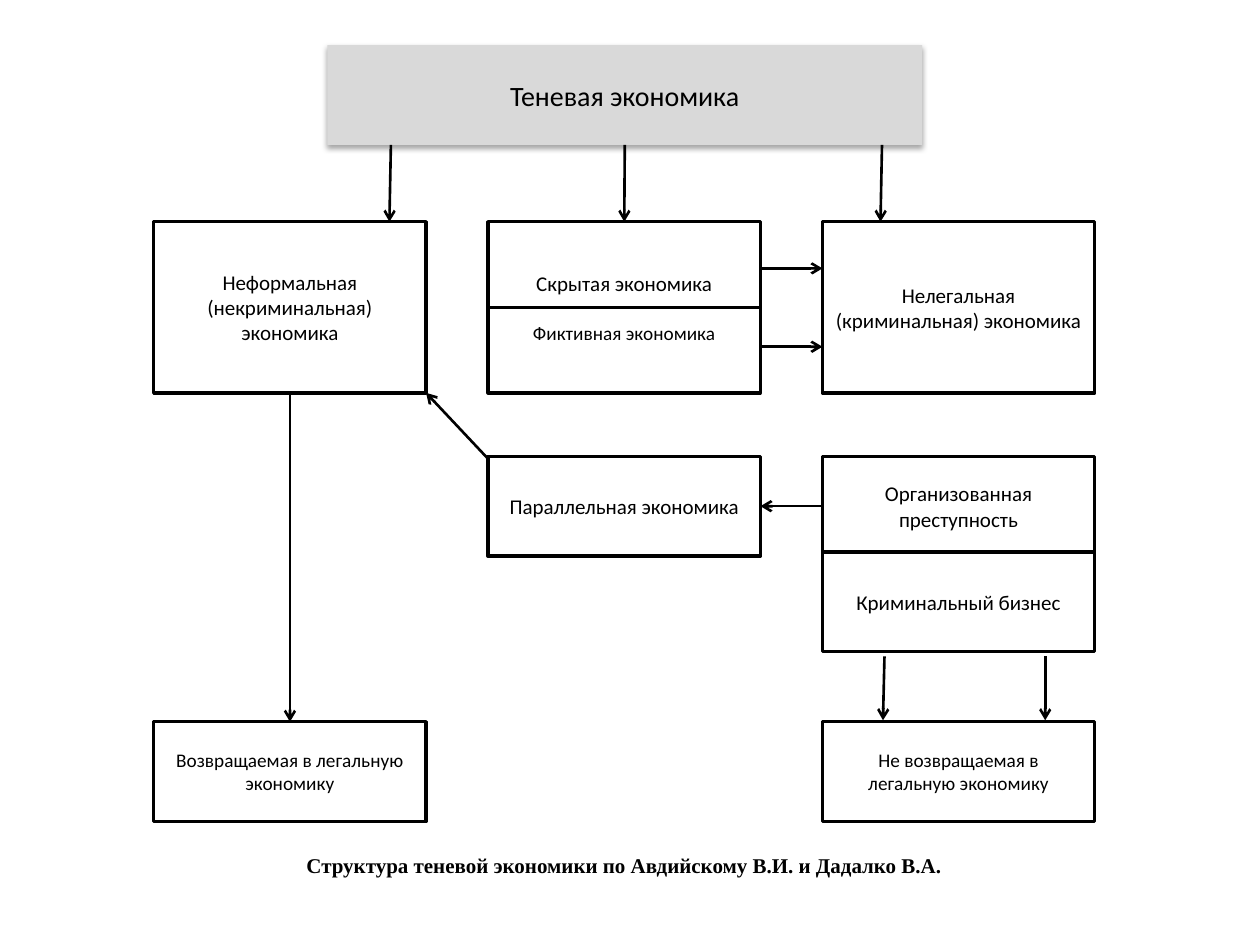
from collections import namedtuple

from lxml import etree
from pptx import Presentation
from pptx import util as u
from pptx.dml.color import RGBColor
from pptx.enum import shapes, text
from pptx.oxml import ns

BLACK = RGBColor(0x00, 0x00, 0x00)
WHITE = RGBColor(0xFF, 0xFF, 0xFF)
GRAY = RGBColor(0xD9, 0xD9, 0xD9)
TOP, LEFT, BOTTOM, RIGHT = range(4)

# All lengths in centimetres
Area = namedtuple("Area", "left top width height")
COLUMN_WIDTH = 5.49
COLUMN_STEP = 6.74
LOW_HEIGHT = 2.01


def child(parent, tag, **attributes):
    return etree.SubElement(parent, ns.qn(tag), attributes)


def column(area, index, top=0, height=LOW_HEIGHT):
    """Cell of the three-column grid inside an area."""
    return Area(area.left + index * COLUMN_STEP, area.top + top, COLUMN_WIDTH, height)


def write(frame, lines, sizes, font="Calibri", bold=False):
    frame.word_wrap = True
    frame.text = "\n".join(lines)
    for para, size in zip(frame.paragraphs, sizes):
        para.alignment = text.PP_ALIGN.CENTER
        for span in para.runs:
            span.font.name = font
            span.font.size = u.Pt(size)
            span.font.bold = bold
            span.font.color.rgb = BLACK


def add_box(slide, area, lines, sizes, fill=WHITE, outlined=True):
    box = slide.shapes.add_shape(shapes.MSO_SHAPE.RECTANGLE, *map(u.Cm, area))
    box.shadow.inherit = False
    box.fill.solid()
    box.fill.fore_color.rgb = fill
    if outlined:
        box.line.color.rgb = BLACK
        box.line.width = u.Pt(2)
    else:
        box.line.fill.background()
    box.text_frame.vertical_anchor = text.MSO_ANCHOR.MIDDLE
    write(box.text_frame, lines, sizes)
    return box


def add_line(slide, start, end, arrow=True):
    line = slide.shapes.add_connector(
        shapes.MSO_CONNECTOR.STRAIGHT, *map(u.Cm, (*start, *end)))
    line.line.color.rgb = BLACK
    line.line.width = u.Pt(1.5)
    if arrow:
        child(line.line._get_or_add_ln(), "a:tailEnd", type="arrow")
    child(line._element.spPr, "a:effectLst")
    return line


def join(slide, source, source_side, target, target_side):
    arrow = add_line(slide, (0, 0), (1, 1))
    arrow.begin_connect(source, source_side)
    arrow.end_connect(target, target_side)


def draw_heading(slide, area):
    heading = add_box(slide, area, ["Теневая экономика"], [16], GRAY, outlined=False)
    effects = heading._element.spPr.find(ns.qn("a:effectLst"))
    shadow = child(effects, "a:outerShdw", blurRad=str(u.Pt(3.1)), dist=str(u.Pt(1.8)),
                   dir="5400000", rotWithShape="0")
    child(child(shadow, "a:srgbClr", val="000000"), "a:alpha", val="35000")
    return heading


def draw_sectors(slide, area):
    """Three sectors; the middle one is split into two halves."""
    informal, hidden, illegal = (column(area, i, height=area.height) for i in range(3))
    informal_box = add_box(
        slide, informal, ["Неформальная (некриминальная) экономика"], [12])
    add_box(slide, illegal, ["Нелегальная (криминальная) экономика"], [12])
    hidden_box = add_box(
        slide, hidden, ["Скрытая экономика", "Фиктивная экономика"], [12, 11])
    hidden_box.text_frame.paragraphs[1].space_before = u.Pt(14.5)

    right = hidden.left + hidden.width
    middle = area.top + area.height / 2
    add_line(slide, (hidden.left, middle), (right, middle), arrow=False)
    for offset in (0.94, 2.52):
        y = area.top + offset
        add_line(slide, (right, y), (illegal.left, y))
    return informal_box, hidden_box


def draw_crime(slide, area):
    """Parallel economy beside the stacked pair of criminal structures."""
    parallel = add_box(slide, column(area, 1), ["Параллельная экономика"], [12])
    organised = add_box(slide, column(area, 2), ["Организованная преступность"], [12])
    add_box(slide, column(area, 2, top=area.height - LOW_HEIGHT),
            ["Криминальный бизнес"], [12])
    join(slide, organised, LEFT, parallel, RIGHT)


def draw_outcomes(slide, area):
    returned = add_box(
        slide, column(area, 0), ["Возвращаемая в легальную экономику"], [11])
    lost = column(area, 2)
    add_box(slide, lost, ["Не возвращаемая в легальную экономику"], [11])
    for offset, slant in ((1.22, 0.03), (4.49, 0)):
        x = lost.left + offset
        add_line(slide, (x + slant, area.top - 1.32), (x, area.top - 0.03))
    return returned


def draw_caption(slide, area):
    caption = slide.shapes.add_textbox(*map(u.Cm, area))
    write(caption.text_frame, ["Структура теневой экономики по Авдийскому В.И. и Дадалко В.А."],
          [12], "Times New Roman", bold=True)


def main():
    deck = Presentation()
    deck.slide_width, deck.slide_height = u.Cm(25.4), u.Cm(19.05)
    slide = deck.slides.add_slide(deck.slide_layouts[6])

    left, width = 3.1, 2 * COLUMN_STEP + COLUMN_WIDTH
    title_area = Area(6.6, 0.91, 11.99, LOW_HEIGHT)
    sector_area = Area(left, 4.47, width, 3.45)
    crime_area = Area(left, 9.2, width, 3.94)
    outcome_area = Area(left, 14.55, width, LOW_HEIGHT)

    heading = draw_heading(slide, title_area)
    informal, hidden = draw_sectors(slide, sector_area)
    draw_crime(slide, crime_area)
    returned = draw_outcomes(slide, outcome_area)
    draw_caption(slide, Area(left, 17.07, width, 0.66))

    # Arrows between regions
    join(slide, heading, BOTTOM, hidden, TOP)
    join(slide, informal, BOTTOM, returned, TOP)
    title_bottom = title_area.top + title_area.height
    for x in (7.85, 17.75):
        add_line(slide, (x + 0.03, title_bottom), (x, sector_area.top))
    add_line(slide, (left + COLUMN_STEP, crime_area.top + 0.05),
             (left + COLUMN_WIDTH, sector_area.top + sector_area.height))

    deck.save("out.pptx")


if __name__ == "__main__":
    main()
